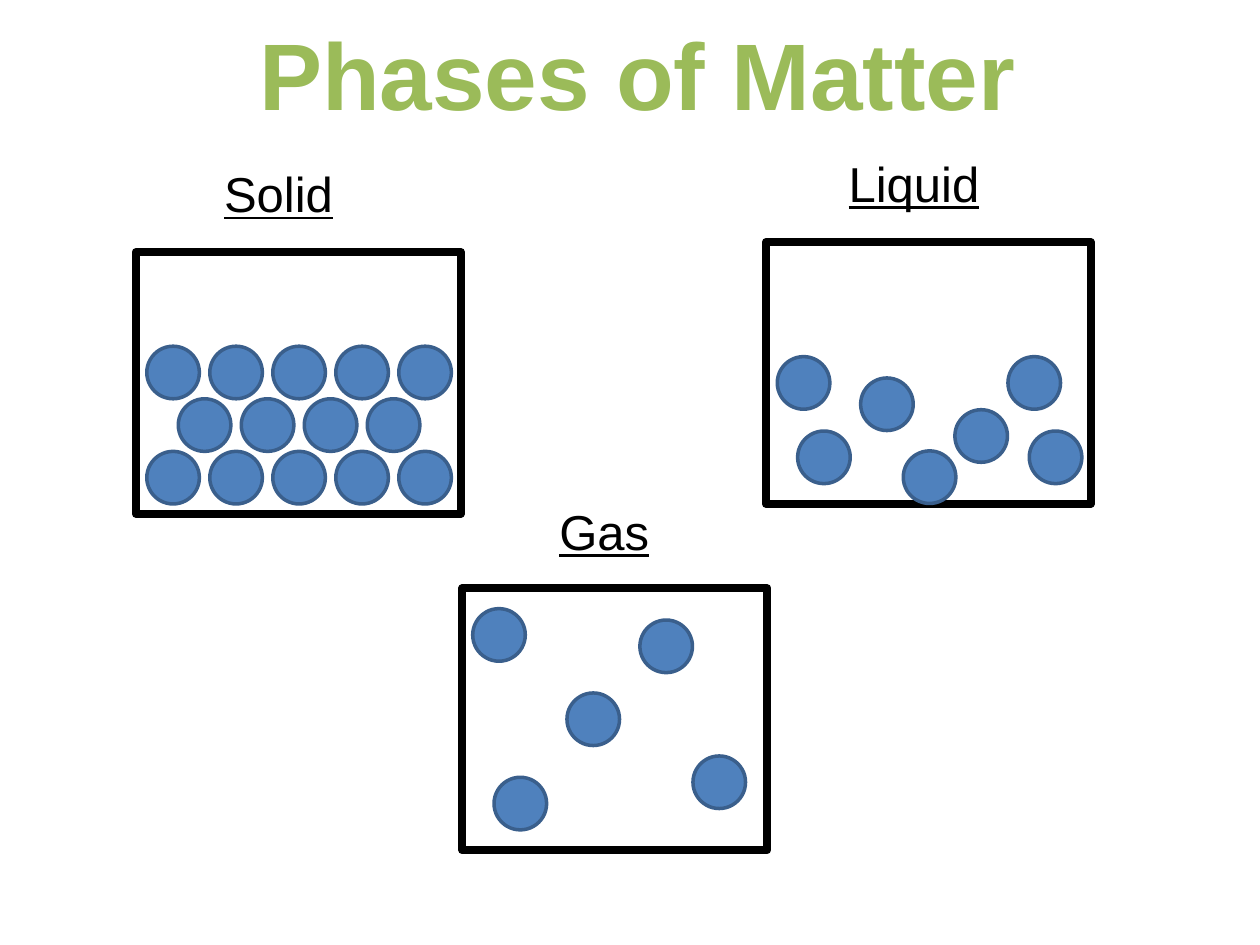
from pptx import Presentation
from pptx import util as u
from pptx.dml.color import RGBColor
from pptx.enum import shapes, text


def colour(hex_value):
    return RGBColor.from_string(hex_value)


def write(frame, words, color, formats):
    frame.text = words
    frame.vertical_anchor = text.MSO_ANCHOR.TOP
    paragraph = frame.paragraphs[0]
    paragraph.alignment = text.PP_ALIGN.CENTER
    font = paragraph.runs[0].font
    font.color.rgb = colour(color)
    for key, value in formats.items():
        setattr(font, key, value)


deck = Presentation()
deck.slide_width, deck.slide_height = u.Cm(25.4), u.Cm(19.05)
slide = deck.slides.add_slide(deck.slide_layouts[5])

# Title
heading = slide.shapes.title
heading.left, heading.top = u.Cm(4.9), u.Cm(0.2)
heading.width, heading.height = u.Cm(15.9), u.Cm(2.57)
write(heading.text_frame, "Phases of Matter", "9BBB59",
      {"name": "Arial", "size": u.Pt(54), "bold": True})
heading.text_frame.word_wrap = False
heading.text_frame.auto_size = text.MSO_AUTO_SIZE.NONE

# Particle positions: the solid is a staggered lattice, the others are loose
BALL = 1.06
solid = [(2.96 + 1.27 * (column + row % 2 / 2), 9.1 - BALL * row)
         for row in range(3) for column in range(5 - row % 2)]
liquid = [(16.08, 8.69), (19.25, 8.26), (18.21, 9.09), (15.67, 7.19),
          (20.32, 7.19), (17.35, 7.62), (20.75, 8.69)]
gas = [(13.97, 15.24), (9.96, 15.67), (12.9, 12.5), (11.43, 13.97),
       (9.53, 12.27)]

# Phase name, label box, container box, particles
phases = [
    ("Solid", (0, 3.18, 11.23, 1.45), (2.74, 5.08, 6.55, 5.28), solid),
    ("Liquid", (11.86, 2.97, 13.13, 2.64), (15.44, 4.88, 6.55, 5.28), liquid),
    ("Gas", (6.78, 9.98, 10.8, 1.45), (9.32, 11.86, 6.15, 5.28), gas),
]

for phase, label_box, container_box, particles in phases:
    # Label
    label = slide.shapes.add_textbox(*map(u.Cm, label_box))
    label.text_frame.word_wrap = True
    write(label.text_frame, phase, "000000",
          {"name": "Arial", "size": u.Pt(28), "underline": True})

    # Container
    container = slide.shapes.add_shape(
        shapes.MSO_SHAPE.RECTANGLE, *map(u.Cm, container_box))
    container.shadow.inherit = False
    container.fill.background()
    container.line.color.rgb = colour("000000")
    container.line.width = u.Pt(4.5)

    # Particles
    for left, top in particles:
        particle = slide.shapes.add_shape(
            shapes.MSO_SHAPE.OVAL, *map(u.Cm, (left, top, BALL, BALL)))
        particle.shadow.inherit = False
        particle.fill.solid()
        particle.fill.fore_color.rgb = colour("4F81BD")
        particle.line.color.rgb = colour("3A5F8C")
        particle.line.width = u.Pt(2)

deck.save("out.pptx")
